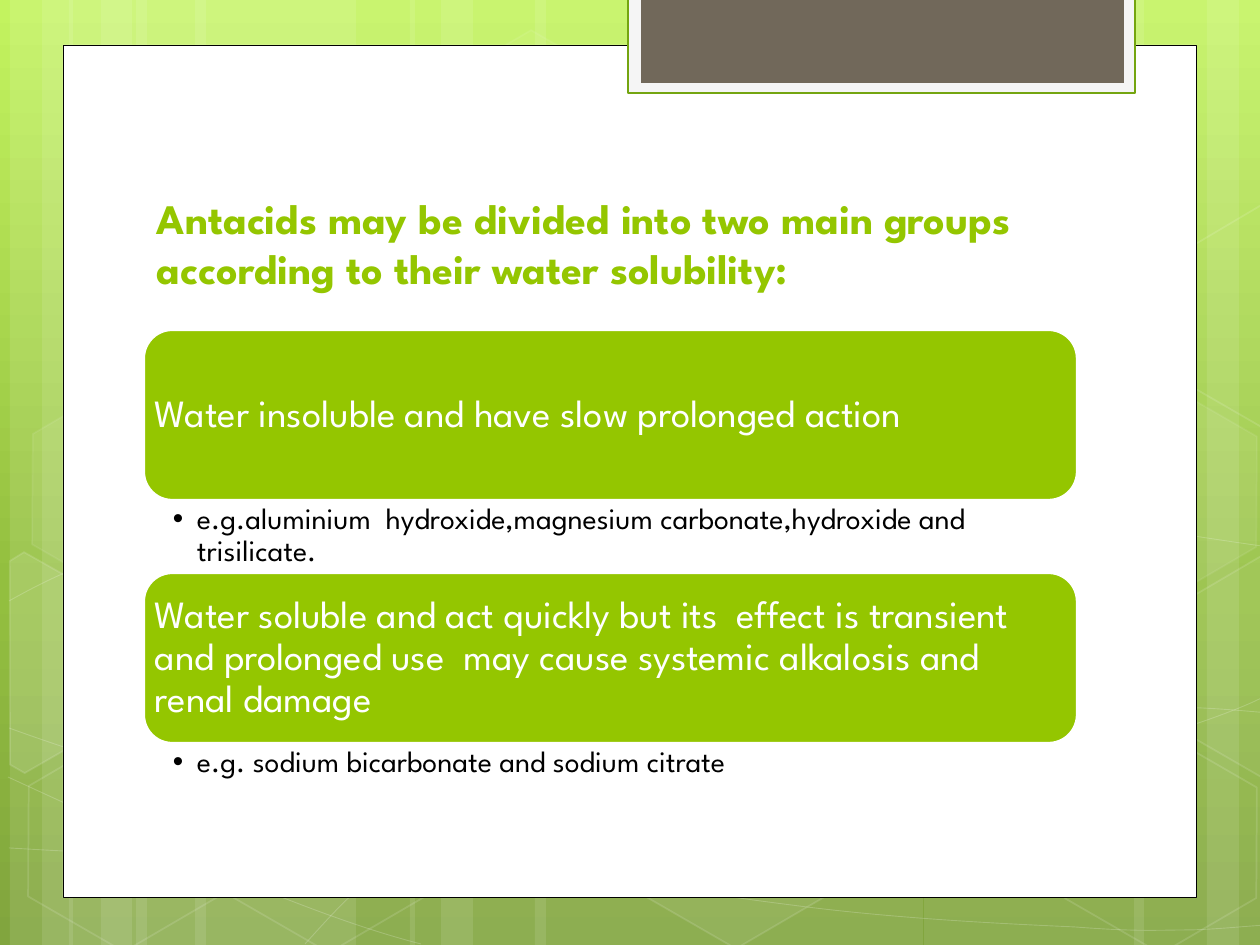
from copy import deepcopy
from math import cos, radians, sin

from lxml.etree import SubElement
from pptx import Presentation
from pptx.dml.color import RGBColor
from pptx.enum.shapes import MSO_SHAPE as Kind
from pptx.enum.text import MSO_ANCHOR as Anchor, PP_ALIGN as Align
from pptx.oxml.ns import qn
from pptx.util import Pt

SCALE = 914400 / 126
FONT = "League Spartan"
TILT = 30
WHITE = RGBColor(0xFF, 0xFF, 0xFF)
BLACK = RGBColor(0, 0, 0)
LIME = RGBColor(0x94, 0xC6, 0x00)
GREEN = RGBColor(0x74, 0xA5, 0x10)
PALE = RGBColor(0xF5, 0xF5, 0xF5)
BROWN = RGBColor(0x71, 0x68, 0x5A)
STOPS = [(0, RGBColor(0xC3, 0xF3, 0x5F)), (0.62, RGBColor(0x93, 0xBF, 0x3F)),
         (1, RGBColor(0x81, 0xA5, 0x3E))]

# left, width
BARS = [(136, 220), (10, 63), (42, 105), (195, 220), (69, 63), (101, 105),
        (924, 220), (1207, 63), (1134, 105), (535, 388), (410, 63), (441, 105)]

# start point, then two handles and an end point for each piece
CURVES = [
    [(9, 848), (77, 852), (145, 856), (239, 854), (334, 853), (451, 851), (577, 838),
     (703, 825), (882, 801), (998, 777), (1113, 753), (1231, 716), (1269, 694)],
    [(9, 601), (45, 581), (82, 562), (152, 543), (224, 524), (326, 496), (437, 488),
     (549, 479), (685, 478), (824, 488), (963, 498), (1193, 537), (1269, 547)],
    [(8, 777), (160, 847), (311, 916), (421, 944)],
    [(9, 728), (48, 742), (88, 756), (161, 776), (234, 795), (344, 827), (450, 848),
     (554, 869), (687, 892), (791, 905), (896, 919), (1008, 924), (1075, 927),
     (1140, 932), (1158, 930), (1191, 930), (1223, 929), (1246, 926), (1269, 925)],
    [(305, 944), (328, 919), (350, 893), (381, 871), (411, 848), (454, 823), (489, 805),
     (524, 787), (546, 780), (592, 767), (638, 755), (722, 737), (766, 728),
     (811, 719), (818, 719), (857, 717), (896, 713), (958, 709), (1000, 708),
     (1045, 707), (1116, 708), (1116, 708), (1144, 708), (1173, 708), (1201, 708),
     (1223, 709), (1245, 711), (1268, 713)],
]

# left, top, fill alpha, line alpha
HEXES = [(421, 45, 4, 8), (626, 742, 6, 12), (14, 745, 0, 12), (18, 393, 7, 8),
         (219, 746, 0, 12), (949, 571, 10, 12), (1051, 747, 0, 12), (1051, 396, 7, 8)]

# pivot, corners, fill alpha
SHARDS = [
    ((45, 674), [(10, 561), (24, 552), (121, 607), (120, 718), (25, 773), (10, 765)], 10),
    ((1241, 655), [(1167, 611), (1261, 556), (1271, 562), (1271, 772), (1263, 777),
                   (1167, 722)], 4),
    ((1241, 304), [(1167, 261), (1261, 205), (1273, 212), (1271, 422), (1263, 427),
                   (1167, 372)], 0),
]

GROUPS = [
    ("Water insoluble and have slow prolonged action",
     "e.g.aluminium  hydroxide,magnesium carbonate,hydroxide and trisilicate.", 74),
    ("Water soluble and act quickly but its  effect is transient and prolonged use  "
     "may cause systemic alkalosis and renal damage",
     "e.g. sodium bicarbonate and sodium citrate", 50),
]


def px(n):
    return round(n * SCALE)


def fade(fmt, alpha):
    """Make a solid fill partly clear; alpha is in percent."""
    if alpha < 100:
        for color in fmt._xPr.iter(qn("a:srgbClr")):
            SubElement(color, qn("a:alpha"), val=str(alpha * 1000))


def paint(shape, fill=None, line=None, width=1, alpha=100, line_alpha=100):
    shape.shadow.inherit = False
    if fill is None or alpha == 0:
        shape.fill.background()
    else:
        shape.fill.solid()
        shape.fill.fore_color.rgb = fill
        fade(shape.fill, alpha)
    if line is None:
        shape.line.fill.background()
    else:
        shape.line.color.rgb = line
        shape.line.width = Pt(width)
        fade(shape.line.fill, line_alpha)
    return shape


def add(slide, kind, x, y, w, h, **look):
    shape = slide.shapes.add_shape(kind, px(x), px(y), px(w), px(h))
    return paint(shape, **look)


def trace(slide, points, close, **look):
    pen = slide.shapes.build_freeform(*points[0], scale=SCALE)
    pen.add_line_segments(points[1:], close=close)
    return paint(pen.convert_to_shape(), **look)


def bend(shape):
    """Turn each three straight pieces of an outline into one cubic curve."""
    lines = shape._element.xpath(".//a:lnTo")
    for i in range(0, len(lines), 3):
        cubic = SubElement(lines[i].getparent(), qn("a:cubicBezTo"))
        for line in lines[i:i + 3]:
            cubic.append(line[0])
            line.getparent().remove(line)


def turn(point, pivot, angle):
    c, s = cos(radians(angle)), sin(radians(angle))
    x, y = point[0] - pivot[0], point[1] - pivot[1]
    return pivot[0] + c * x - s * y, pivot[1] + s * x + c * y


def write(shape, text, size, color, bold=False, anchor=Anchor.TOP,
          pad=(13, 6, 13, 6), spacing=None, bullet=False):
    frame = shape.text_frame
    frame.word_wrap = True
    frame.vertical_anchor = anchor
    (frame.margin_left, frame.margin_top,
     frame.margin_right, frame.margin_bottom) = map(px, pad)
    para = frame.paragraphs[0]
    para.alignment = Align.LEFT
    if bullet:
        props = para._p.get_or_add_pPr()
        props.set("marL", str(px(24)))
        props.set("indent", str(px(-24)))
        SubElement(props, qn("a:buFont"), typeface="Arial")
        SubElement(props, qn("a:buChar"), char="•")
    if spacing:
        para.line_spacing = spacing
    run = para.add_run()
    run.text = text
    font = run.font
    font.name, font.size, font.bold = FONT, Pt(size), bold
    font.color.rgb = color


def add_text(slide, x, y, w, h, text, **form):
    write(slide.shapes.add_textbox(px(x), px(y), px(w), px(h)), text, **form)


def shade(slide):
    """Give the background its three-stop gradient."""
    fill = slide.background.fill
    fill.gradient()
    fill.gradient_angle = 270
    first = slide._element.xpath(".//a:gs")[0]
    first.addnext(deepcopy(first))
    for stop, (place, color) in zip(fill.gradient_stops, STOPS):
        stop.color.rgb = color
        stop.position = place


def decorate(slide):
    for x, w in BARS:
        add(slide, Kind.RECTANGLE, x, 0, w, 945, fill=WHITE, alpha=10)
    for knots in CURVES:
        bend(trace(slide, knots, False, line=WHITE, width=0.5, line_alpha=20))
    for x, y, alpha, edge in HEXES:
        cell = add(slide, Kind.HEXAGON, x, y, 220, 192, fill=WHITE, line=WHITE,
                   alpha=alpha, line_alpha=edge)
        cell.adjustments[0] = 0.285
        cell.rotation = TILT
    for pivot, corners, alpha in SHARDS:
        flat = [turn(corner, pivot, -TILT) for corner in corners]
        shard = trace(slide, flat, True, fill=WHITE, line=WHITE,
                      alpha=alpha, line_alpha=12)
        shard.rotation = TILT


def add_panel(slide):
    add(slide, Kind.RECTANGLE, 63, 45, 1134, 853, fill=WHITE, line=BLACK, width=0.5)
    add(slide, Kind.RECTANGLE, 628, -3, 507, 96, fill=PALE, line=GREEN, width=1.25)
    add(slide, Kind.RECTANGLE, 641, -3, 483, 86, fill=BROWN)


def add_groups(slide):
    x, w, box = 144, 933, 170
    top = 330
    for head, note, deep in GROUPS:
        add(slide, Kind.ROUNDED_RECTANGLE, x, top, w, box,
            fill=LIME, line=WHITE, width=1.25)
        add_text(slide, x, top, w, box, head, size=22, color=WHITE,
                 anchor=Anchor.MIDDLE, pad=(11, 11, 11, 11), spacing=0.9)
        add_text(slide, x, top + box, w, deep, note, size=17, color=BLACK,
                 pad=(29, 4, 21, 4), spacing=0.9, bullet=True)
        top += box + deep - 1


def main():
    deck = Presentation()
    deck.slide_width, deck.slide_height = px(1260), px(945)
    slide = deck.slides.add_slide(deck.slide_layouts[6])
    shade(slide)
    decorate(slide)
    add_panel(slide)
    add_text(slide, 144, 141, 968, 158,
             "Antacids may be divided into two main groups "
             "according to their water solubility:",
             size=24, color=LIME, bold=True, anchor=Anchor.BOTTOM)
    add_groups(slide)
    deck.save("out.pptx")


if __name__ == "__main__":
    main()
